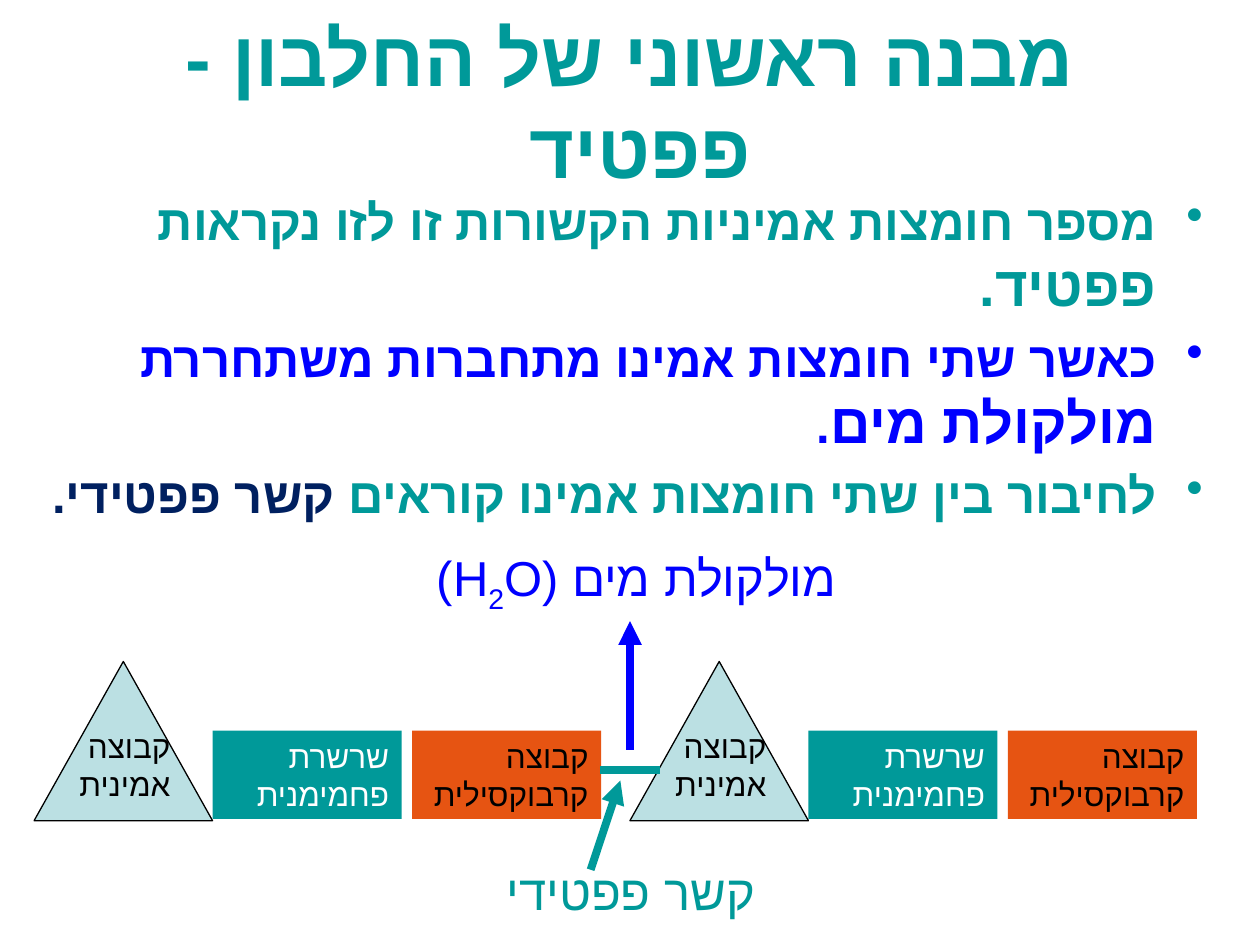
from dataclasses import dataclass, replace
from typing import Optional, Sequence

from lxml import etree
from pptx import Presentation
from pptx import util as u
from pptx.dml import color
from pptx.enum import lang, shapes, text
from pptx.oxml import ns

Pt = u.Pt
TEAL, BLUE, NAVY = "009999", "0000FF", "002060"
ORANGE, PALE, BLACK, WHITE = "E65412", "BBE0E3", "000000", "FFFFFF"
HANGING = 27
RIGHT, CENTER = text.PP_ALIGN.RIGHT, text.PP_ALIGN.CENTER


@dataclass(frozen=True)
class Span:
    words: str
    size: float
    colour: str
    bold: bool = False
    baseline: int = 0


@dataclass(frozen=True)
class Line:
    spans: Sequence[Span]
    align: text.PP_ALIGN = RIGHT
    hanging: bool = False
    bullet: bool = False


@dataclass(frozen=True)
class Area:
    left: float
    top: float
    width: float
    height: float


@dataclass(frozen=True)
class Part:
    """One part of an amino acid, placed relative to its left edge."""
    area: Area
    words: str
    colour: str
    fill: Optional[str] = None


@dataclass(frozen=True)
class Stroke:
    start: tuple[float, float]
    end: tuple[float, float]
    colour: str
    arrow: bool = False


def rgb(value: str) -> color.RGBColor:
    return color.RGBColor.from_string(value)


def add_element(parent, tag: str, **attributes: str):
    return etree.SubElement(parent, ns.qn(tag), **attributes)


def write_lines(box, lines: Sequence[Line], gap: float = 0,
                anchor=text.MSO_ANCHOR.TOP) -> None:
    frame = box.text_frame
    frame.word_wrap = True
    frame.vertical_anchor = anchor
    frame.text = "\n".join("" for _ in lines)
    for index, (para, line) in enumerate(zip(frame.paragraphs, lines)):
        para.alignment = line.align
        if index:
            para.space_before = Pt(gap)
        props = para._p.get_or_add_pPr()
        props.set("rtl", "1")
        if line.hanging:
            props.set("marR", "0")
            props.set("marL", str(Pt(HANGING)))
            props.set("indent", str(-Pt(HANGING)))
        if line.bullet:
            add_element(props, "a:buChar", char="•")
        for item in line.spans:
            span = para.add_run()
            span.text = item.words
            font = span.font
            font.name, font.size, font.bold = "Arial", Pt(item.size), item.bold
            font.color.rgb = rgb(item.colour)
            font.language_id = lang.MSO_LANGUAGE_ID.HEBREW
            run_props = span._r.get_or_add_rPr()
            add_element(run_props, "a:cs", typeface="Arial")
            if item.baseline:
                run_props.set("baseline", str(item.baseline * 1000))


def add_text(page, area: Area, lines: Sequence[Line], gap: float = 0,
             anchor=text.MSO_ANCHOR.TOP) -> None:
    box = page.shapes.add_textbox(Pt(area.left), Pt(area.top), Pt(area.width), Pt(area.height))
    write_lines(box, lines, gap, anchor)


def add_shape(page, kind, area: Area, fill: str, outline: Optional[str] = None):
    shape = page.shapes.add_shape(kind, Pt(area.left), Pt(area.top),
                                  Pt(area.width), Pt(area.height))
    shape.shadow.inherit = False
    shape.fill.solid()
    shape.fill.fore_color.rgb = rgb(fill)
    if outline:
        shape.line.color.rgb = rgb(outline)
        shape.line.width = Pt(0.75)
    else:
        shape.line.fill.background()
    return shape


def add_stroke(page, stroke: Stroke) -> None:
    line = page.shapes.add_connector(shapes.MSO_CONNECTOR.STRAIGHT,
                                     *map(Pt, stroke.start + stroke.end))
    line.line.color.rgb = rgb(stroke.colour)
    line.line.width = Pt(4.5)
    if stroke.arrow:
        add_element(line.line._get_or_add_ln(), "a:tailEnd", type="triangle")
    add_element(line._element.spPr, "a:effectLst")


TRIANGLE = Area(0, 378, 102, 91)
PARTS = [
    Part(Area(216, 417.5, 108, 50.5), "קבוצה קרבוקסילית ", BLACK, ORANGE),
    Part(Area(17, 412, 68, 50.5), "קבוצה אמינית ", BLACK),
    Part(Area(102, 417.5, 108, 50.5), "שרשרת פחמימנית ", WHITE, TEAL),
]


def add_amino_acid(page, left: float) -> None:
    add_shape(page, shapes.MSO_SHAPE.ISOSCELES_TRIANGLE,
              replace(TRIANGLE, left=left), PALE, BLACK)
    for part in PARTS:
        area = replace(part.area, left=left + part.area.left)
        lines = [Line([Span(part.words, 18, part.colour)])]
        if part.fill:
            box = add_shape(page, shapes.MSO_SHAPE.RECTANGLE, area, part.fill)
            write_lines(box, lines)
        else:
            add_text(page, area, lines)


def bullet(*spans: Span) -> Line:
    return Line(spans, hanging=True, bullet=True)


def main() -> None:
    deck = Presentation()
    deck.slide_width, deck.slide_height = Pt(720), Pt(540)
    page = deck.slides.add_slide(deck.slide_layouts[6])

    # Title
    title = Span("מבנה ראשוני של החלבון - פפטיד ", 44, TEAL, True)
    add_text(page, Area(36, 21.5, 648, 73), [Line([title], CENTER)],
             anchor=text.MSO_ANCHOR.MIDDLE)

    # Definitions
    add_text(page, Area(0, 106, 695, 170), [
        bullet(Span("מספר חומצות אמיניות הקשורות זו לזו נקראות ", 28, TEAL, True),
               Span("פפטיד.", 32, TEAL, True)),
        bullet(Span("כאשר שתי חומצות אמינו מתחברות משתחררת ", 28, BLUE, True),
               Span("מולקולת מים", 32, BLUE, True),
               Span(".", 28, BLUE, True)),
        bullet(Span("לחיבור בין שתי חומצות אמינו קוראים ", 28, TEAL, True),
               Span("קשר פפטידי.", 28, NAVY, True)),
    ], gap=6)

    # Two amino acids
    for left in (19.5, 360):
        add_amino_acid(page, left)

    # Labels of the water molecule and the bond
    water = [Span("מולקולת מים (H", 28, BLUE), Span("2", 28, BLUE, baseline=-25),
             Span("O)", 28, BLUE)]
    add_text(page, Area(241, 309.5, 244, 51), [Line(water, hanging=True)])
    bond = [Span("קשר פפטידי", 28, TEAL)]
    add_text(page, Area(235.5, 489, 250, 51), [Line(bond, CENTER, hanging=True)])

    # Arrows to the labels and the bond itself
    for stroke in (
        Stroke((337.5, 497), (354.5, 446), TEAL, arrow=True),
        Stroke((360, 428.5), (360, 355), BLUE, arrow=True),
        Stroke((343, 440), (377, 440), TEAL),
    ):
        add_stroke(page, stroke)

    deck.save("out.pptx")


if __name__ == "__main__":
    main()
